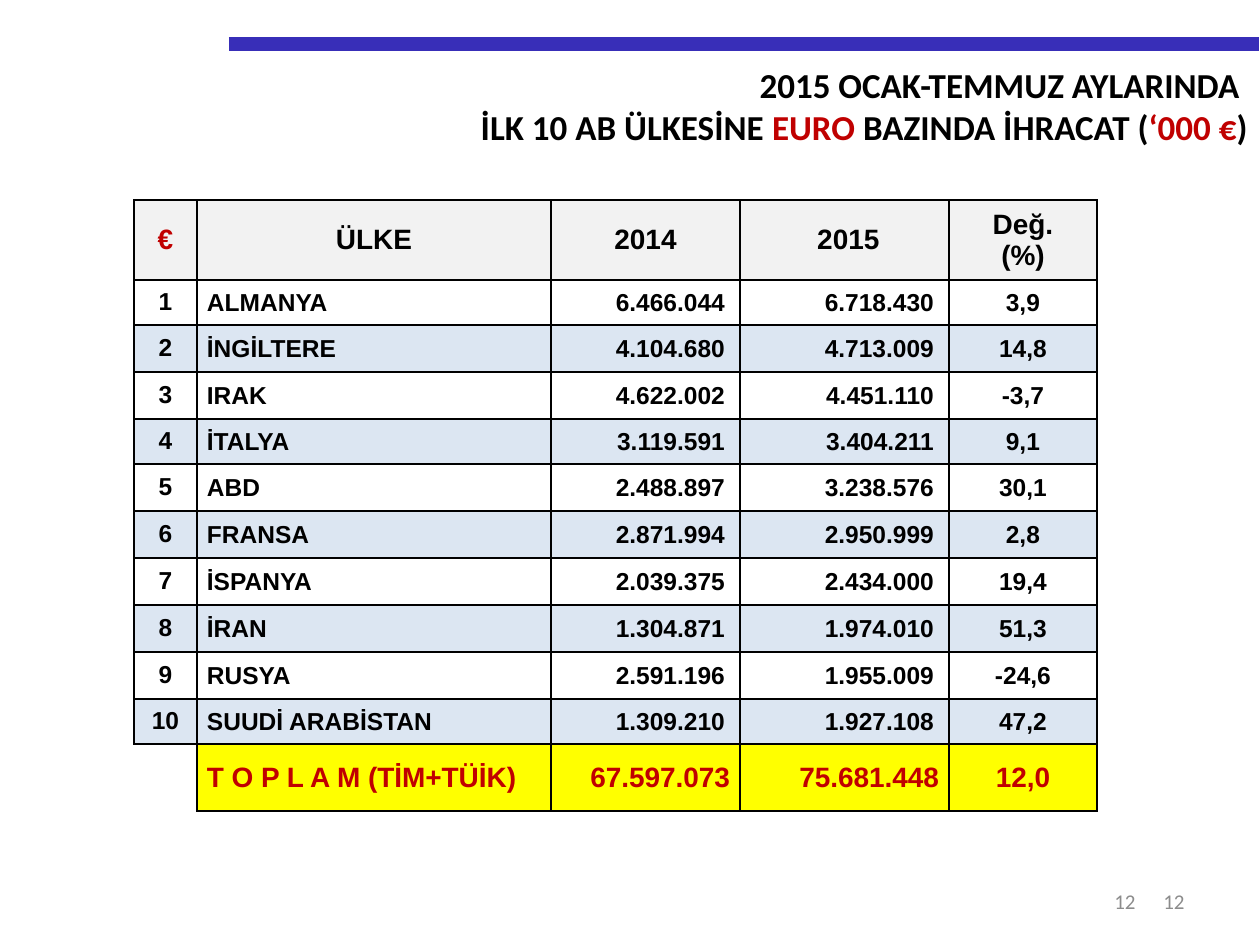
from typing import NamedTuple, Optional

from lxml.etree import SubElement
from pptx import Presentation
from pptx.dml.color import RGBColor
from pptx.enum.shapes import MSO_CONNECTOR as Connector
from pptx.enum.text import MSO_ANCHOR as Anchor, MSO_AUTO_SIZE as AutoSize, PP_ALIGN as Align
from pptx.oxml.ns import qn
from pptx.util import Emu, Pt

PX_PER_INCH = 126

BLACK = RGBColor(0x00, 0x00, 0x00)
RED = RGBColor(0xC0, 0x00, 0x00)
GREY = RGBColor(0x8C, 0x8C, 0x8C)
BAR_BLUE = RGBColor(0x38, 0x2E, 0xB8)
HEADER_GREY = RGBColor(0xF2, 0xF2, 0xF2)
BAND_BLUE = RGBColor(0xDC, 0xE6, 0xF2)
YELLOW = RGBColor(0xFF, 0xFF, 0x00)


class Span(NamedTuple):
    text: str
    color: RGBColor = BLACK


class CellStyle(NamedTuple):
    insets: tuple[int, int, int, int]  # left, top, right, bottom
    align: Align
    size: int = 14
    color: RGBColor = BLACK
    fill: Optional[RGBColor] = None


class TextBox(NamedTuple):
    left: int
    top: int
    width: int
    height: int
    lines: list[list[Span]]
    size: int
    bold: bool = False
    anchor: Anchor = Anchor.TOP
    auto_size: AutoSize = AutoSize.NONE


TITLE = TextBox(134, 57, 1126, 97, [
    [Span("2015 OCAK-TEMMUZ AYLARINDA ")],
    [Span("İLK 10 AB ÜLKESİNE "), Span("EURO", RED), Span(" BAZINDA İHRACAT ("),
     Span("‘000 €", RED), Span(")")],
], 20, bold=True, auto_size=AutoSize.SHAPE_TO_FIT_TEXT)
PAGE_NUMBERS = [
    TextBox(left, 876, width, 50, [[Span("12", GREY)]], 12, anchor=Anchor.MIDDLE)
    for left, width in ((903, 294), (883, 265))
]

HEADER = ["€", "ÜLKE", "2014", " 2015", "Değ.\n(%)"]
EXPORTS = [
    ("ALMANYA", "6.466.044", "6.718.430", "3,9"),
    ("İNGİLTERE", "4.104.680", "4.713.009", "14,8"),
    ("IRAK", "4.622.002", "4.451.110", "-3,7"),
    ("İTALYA", "3.119.591", "3.404.211", "9,1"),
    ("ABD", "2.488.897", "3.238.576", "30,1"),
    ("FRANSA", "2.871.994", "2.950.999", "2,8"),
    ("İSPANYA", "2.039.375", "2.434.000", "19,4"),
    ("İRAN", "1.304.871", "1.974.010", "51,3"),
    ("RUSYA", "2.591.196", "1.955.009", "-24,6"),
    ("SUUDİ ARABİSTAN", "1.309.210", "1.927.108", "47,2"),
]
TOTAL = ["", "T O P L A M (TİM+TÜİK)", "67.597.073", "75.681.448", "12,0"]
COLUMN_WIDTHS = [63, 354, 189, 209, 148]
ROW_HEIGHTS = [80, 45, 47, 47, 45, 47, 47, 47, 47, 47, 45, 67]

CENTERED = CellStyle((13, 6, 13, 6), Align.CENTER)
COUNTRY = CellStyle((10, 1, 1, 0), Align.LEFT)
AMOUNT = CellStyle((1, 1, 15, 0), Align.RIGHT)
CHANGE = CellStyle((1, 1, 1, 0), Align.CENTER)
BODY_STYLES = [CENTERED, COUNTRY, AMOUNT, AMOUNT, CHANGE]


def px(length: int) -> Emu:
    return Emu(round(length * 914400 / PX_PER_INCH))


def add_text_box(page, item: TextBox) -> None:
    box = page.shapes.add_textbox(px(item.left), px(item.top), px(item.width), px(item.height))
    frame = box.text_frame
    frame.text = "\n".join("" for _ in item.lines)
    frame.word_wrap = True
    frame.auto_size = item.auto_size
    frame.vertical_anchor = item.anchor
    for para, line in zip(frame.paragraphs, item.lines):
        para.alignment = Align.RIGHT
        for span in line:
            run = para.add_run()
            run.text = span.text
            run.font.name = "Calibri"
            run.font.size = Pt(item.size)
            run.font.bold = item.bold
            run.font.color.rgb = span.color


def add_bar(page) -> None:
    bar = page.shapes.add_connector(Connector.STRAIGHT, px(229), px(44), px(1259), px(44))
    bar.line.color.rgb = BAR_BLUE
    bar.line.width = Pt(8.5)
    SubElement(bar._element.spPr, qn("a:effectLst"))


def set_borders(cell, sides: str) -> None:
    properties = cell._tc.get_or_add_tcPr()
    for side in "LRTB":
        line = SubElement(properties, qn(f"a:ln{side}"), w=str(Pt(1)))
        if side in sides:
            fill = SubElement(line, qn("a:solidFill"))
            SubElement(fill, qn("a:srgbClr"), val=str(BLACK))
        else:
            SubElement(line, qn("a:noFill"))


def fill_cell(cell, text: str, style: CellStyle, sides: str) -> None:
    set_borders(cell, sides)
    if style.fill is None:
        cell.fill.background()
    else:
        cell.fill.solid()
        cell.fill.fore_color.rgb = style.fill
    cell.vertical_anchor = Anchor.MIDDLE
    cell.margin_left, cell.margin_top, cell.margin_right, cell.margin_bottom = map(px, style.insets)
    cell.text_frame.text = text
    for para in cell.text_frame.paragraphs:
        para.alignment = style.align
        for run in para.runs:
            run.font.name = "Arial"
            run.font.size = Pt(style.size)
            run.font.bold = True
            run.font.color.rgb = style.color


def row_styles(row: int) -> list[CellStyle]:
    if row == 0:
        header = CENTERED._replace(size=16, fill=HEADER_GREY)
        return [header._replace(color=RED)] + [header] * 4
    if row > len(EXPORTS):
        total = [style._replace(size=16, color=RED, fill=YELLOW) for style in BODY_STYLES]
        total[0] = CENTERED
        total[2] = total[3] = total[2]._replace(insets=(1, 1, 10, 0))
        return total
    fill = BAND_BLUE if row % 2 == 0 else None
    return [style._replace(fill=fill) for style in BODY_STYLES]


def add_export_table(page) -> None:
    ranked = [[str(rank), *export] for rank, export in enumerate(EXPORTS, 1)]
    rows = [HEADER, *ranked, TOTAL]
    table = page.shapes.add_table(len(rows), len(HEADER), px(134), px(200),
                                  px(sum(COLUMN_WIDTHS)), px(sum(ROW_HEIGHTS))).table
    table.first_row = table.horz_banding = False
    for column, width in zip(table.columns, COLUMN_WIDTHS):
        column.width = px(width)
    for index, (texts, height) in enumerate(zip(rows, ROW_HEIGHTS)):
        table.rows[index].height = px(height)
        for column, (text, style) in enumerate(zip(texts, row_styles(index))):
            # The empty corner is open to the left and below
            fill_cell(table.cell(index, column), text, style, "LRTB" if text else "RT")


def main() -> None:
    deck = Presentation()
    deck.slide_width, deck.slide_height = px(1260), px(945)
    page = deck.slides.add_slide(deck.slide_layouts[6])

    # Top bar, title and page numbers
    add_bar(page)
    for item in [*PAGE_NUMBERS, TITLE]:
        add_text_box(page, item)

    # Exports by country
    add_export_table(page)
    deck.save("out.pptx")


if __name__ == "__main__":
    main()
